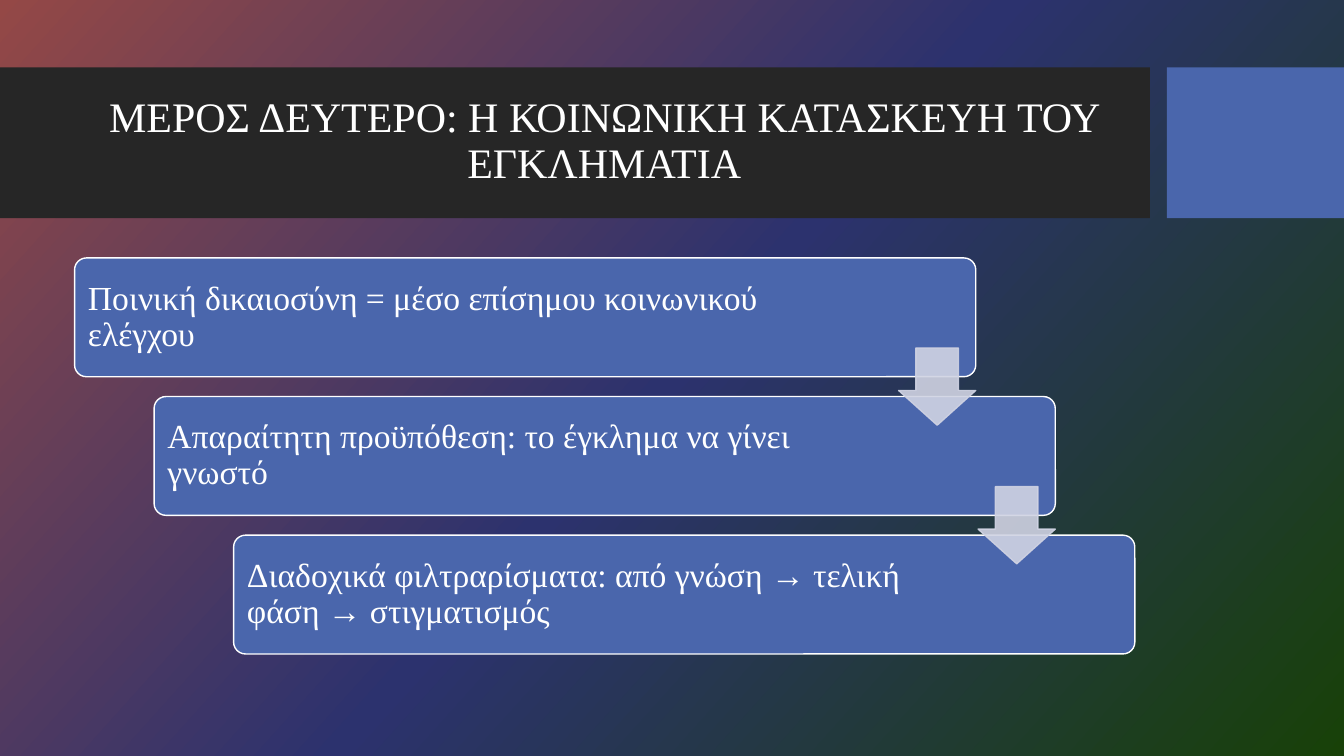
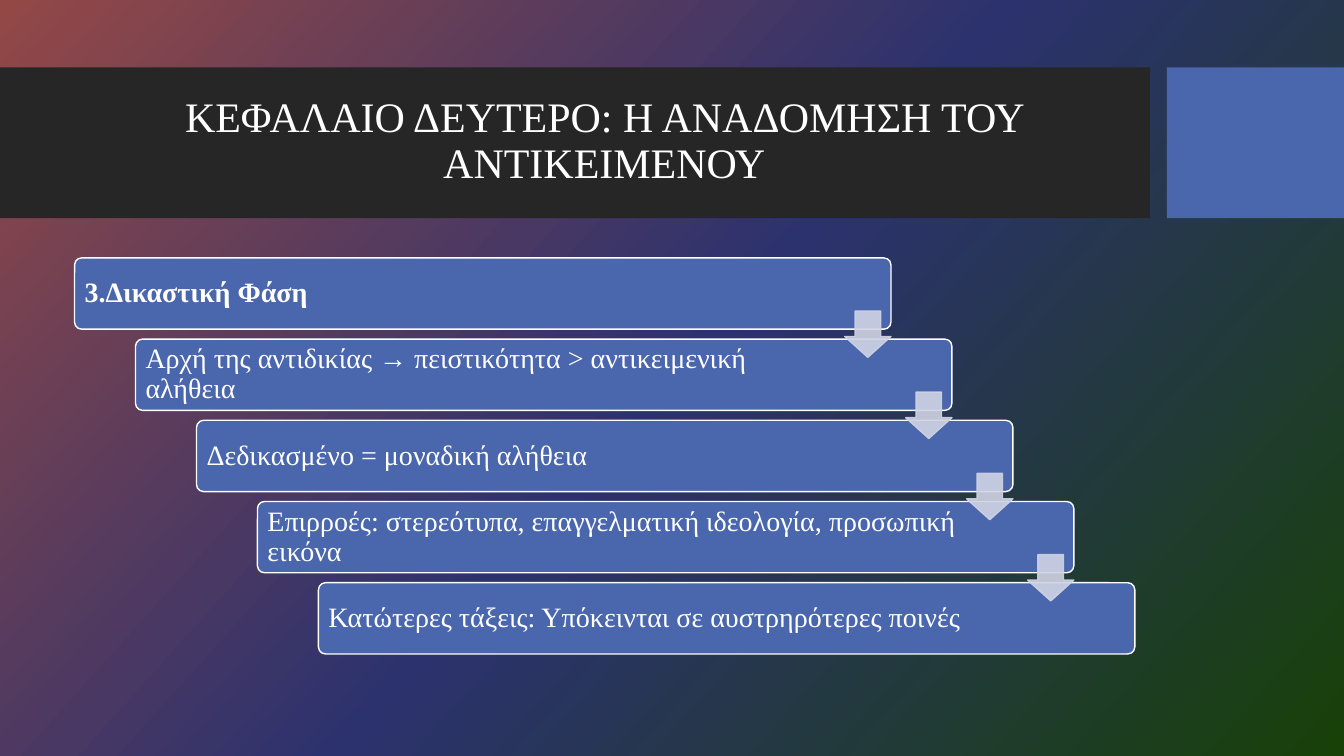
import copy

import pptx
import pptx.dml.color
import pptx.enum.shapes
import pptx.enum.text
import pptx.oxml.ns
import pptx.util
from lxml import etree

Cm, Pt = pptx.util.Cm, pptx.util.Pt
SHAPE = pptx.enum.shapes.MSO_SHAPE
ALIGN = pptx.enum.text.PP_ALIGN
qn = pptx.oxml.ns.qn

WIDTH, HEIGHT = 33.87, 19.05
FONT = "Times New Roman"
WHITE, DARK, BLUE, PALE = "FFFFFF", "262626", "4A66AC", "D0D3E3"
BACK = ["944846", "2C326E", "184108"]
LEFT, TOP, SPAN, DEPTH = 1.88, 6.5, 26.72, 9.98  # area of the stairs


def rgb(color):
    return pptx.dml.color.RGBColor.from_string(color)


def paint(master):
    """Give the master a diagonal gradient with evenly spaced stops."""
    fill = master.background.fill
    fill.gradient()
    fill.gradient_angle = 360 - 42
    stops = master.element.find(".//" + qn("a:gsLst"))
    stops.insert(1, copy.deepcopy(stops[0]))
    for i, (stop, color) in enumerate(zip(fill.gradient_stops, BACK)):
        stop.position = i / (len(BACK) - 1)
        stop.color.rgb = rgb(color)


def write(shape, text, size=24, bold=False, align=ALIGN.LEFT, pads=(0.25, 0.25)):
    frame = shape.text_frame
    frame.word_wrap = True
    frame.vertical_anchor = pptx.enum.text.MSO_ANCHOR.MIDDLE
    frame.margin_left, frame.margin_right = map(Cm, pads)
    frame.margin_top = frame.margin_bottom = 0
    par = frame.paragraphs[0]
    par.alignment, par.line_spacing = align, 0.9
    run = par.add_run()
    run.text = text
    font = run.font
    font.name, font.size, font.bold = FONT, Pt(size), bold
    font.color.rgb = rgb(WHITE)


def block(slide, kind, box, fill, line=None, adjust=()):
    shape = slide.shapes.add_shape(kind, *map(Cm, box))
    shape.shadow.inherit = False
    shape.fill.solid()
    shape.fill.fore_color.rgb = rgb(fill)
    if line:
        shape.line.color.rgb = rgb(line)
        shape.line.width = Pt(1)
    else:
        shape.line.fill.background()
    for i, value in enumerate(adjust):
        shape.adjustments[i] = value
    return shape


def fade(shape, percent):
    """Set the opacity of fill and line."""
    for color in shape.element.spPr.iter(qn("a:srgbClr")):
        etree.SubElement(color, qn("a:alpha")).set("val", str(percent * 1000))


def header(slide, text):
    block(slide, SHAPE.RECTANGLE, (0, 1.7, 28.98, 3.8), DARK)
    block(slide, SHAPE.RECTANGLE, (29.41, 1.7, WIDTH - 29.41, 3.8), BLUE)
    title = slide.shapes.add_textbox(Cm(1.88), Cm(2.08), Cm(26.7), Cm(3))
    write(title, text, size=30, align=ALIGN.CENTER)


def stairs(slide, steps, share, size, pads, lead):
    """Draw boxes that step down to the right, then the arrows between them."""
    count = len(steps)
    wide, high = share * SPAN, 0.9 * DEPTH / count
    right, down = (SPAN - wide) / (count - 1), (DEPTH - high) / (count - 1)
    for i, text in enumerate(steps):
        box = (LEFT + i * right, TOP + i * down, wide, high)
        step = block(slide, SHAPE.ROUNDED_RECTANGLE, box, BLUE, WHITE, [0.1])
        write(step, text, size=size, bold=lead and i == 0, pads=pads)
    side = 0.65 * high
    for i in range(count - 1):
        x = LEFT + i * right + wide - side
        y = TOP + i * down + (high + down - side) / 2
        arrow = block(slide, SHAPE.DOWN_ARROW, (x, y, side, side),
                      PALE, PALE, [0.55, 0.45])
        fade(arrow, 90)


PAGES = [
    ("ΜΕΡΟΣ ΔΕΥΤΕΡΟ: Η ΚΟΙΝΩΝΙΚΗ ΚΑΤΑΣΚΕΥΗ ΤΟΥ ΕΓΚΛΗΜΑΤΙΑ",
     ["Ποινική δικαιοσύνη = μέσο επίσημου κοινωνικού ελέγχου",
      "Απαραίτητη προϋπόθεση: το έγκλημα να γίνει γνωστό",
      "Διαδοχικά φιλτραρίσματα: από γνώση → τελική φάση → στιγματισμός"],
     dict(share=0.85, size=24, pads=(0.25, 4.2), lead=False)),
    ("ΚΕΦΑΛΑΙΟ ΔΕΥΤΕΡΟ: Η ΑΝΑΔΟΜΗΣΗ ΤΟΥ ΑΝΤΙΚΕΙΜΕΝΟΥ",
     ["3.Δικαστική Φάση",
      "Αρχή της αντιδικίας → πειστικότητα > αντικειμενική αλήθεια",
      "Δεδικασμένο = μοναδική αλήθεια",
      "Επιρροές: στερεότυπα, επαγγελματική ιδεολογία, προσωπική εικόνα",
      "Κατώτερες τάξεις: Υπόκεινται σε αυστηρότερες ποινές".replace("αυστηρό", "αυστρηρό")],
     dict(share=0.77, size=20, pads=(0.2, 2.9), lead=True)),
]


def main():
    deck = pptx.Presentation()
    deck.slide_width, deck.slide_height = Cm(WIDTH), Cm(HEIGHT)
    paint(deck.slide_master)
    for title, steps, style in PAGES:
        slide = deck.slides.add_slide(deck.slide_layouts[6])
        header(slide, title)
        stairs(slide, steps, **style)
    deck.save("out.pptx")


if __name__ == "__main__":
    main()
